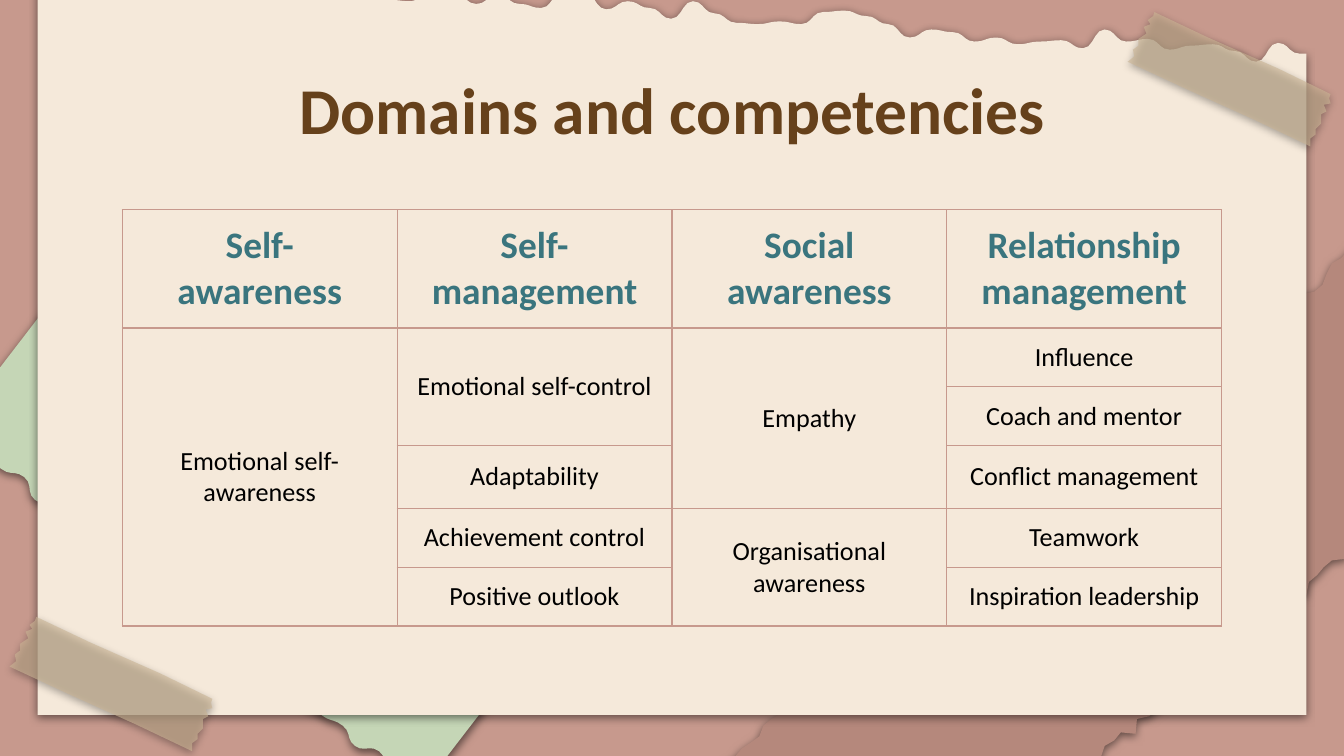
import math

import pptx
import pptx.dml.color
import pptx.enum.text
import pptx.oxml
import pptx.oxml.ns
import pptx.util
from pptx.util import Inches

COLORS = {
    "background": "C7998D",
    "green": "C5D6B6",
    "brown": "B5887C",
    "paper": "F5E9DA",
    "tape": "CAB494",
    "title": "66411B",
    "heading": "3A757E",
    "text": "000000",
}
NAMESPACE = 'xmlns:a="http://schemas.openxmlformats.org/drawingml/2006/main"'
SHADOW = (
    f'<a:outerShdw {NAMESPACE} blurRad="57150" dist="19050" dir="5400000" algn="bl" '
    'rotWithShape="0"><a:srgbClr val="000000"><a:alpha val="50000"/></a:srgbClr></a:outerShdw>'
)

# A 16:9 page
deck = pptx.Presentation()
deck.slide_width = Inches(10)
deck.slide_height = Inches(10) * 9 // 16
page = deck.slides.add_slide(deck.slide_layouts[5])
page.background.fill.solid()
page.background.fill.fore_color.rgb = pptx.dml.color.RGBColor.from_string(COLORS["background"])


def add_scrap(points, color, opacity=100):
    """Draw a closed piece of paper, given in inches, with a soft shadow below it."""
    corners = [(Inches(x), Inches(y)) for x, y in points]
    builder = page.shapes.build_freeform(*corners[0])
    builder.add_line_segments(corners[1:], close=True)
    shape = builder.convert_to_shape()
    shape.fill.solid()
    shape.fill.fore_color.rgb = pptx.dml.color.RGBColor.from_string(COLORS[color])
    shape.line.fill.background()
    shape.shadow.inherit = False
    effects = shape.element.spPr.find(pptx.oxml.ns.qn("a:effectLst"))
    effects.append(pptx.oxml.parse_xml(SHADOW))
    if opacity < 100:
        fill_color = shape.element.spPr.find(".//" + pptx.oxml.ns.qn("a:srgbClr"))
        fill_color.append(pptx.oxml.parse_xml(f'<a:alpha {NAMESPACE} val="{opacity * 1000}"/>'))


def style_text(frame, size, color, bold):
    """Centre the text of a frame and set its font."""
    for para in frame.paragraphs:
        para.alignment = pptx.enum.text.PP_ALIGN.CENTER
        for span in para.runs:
            font_format = {"name": "Calibri", "size": pptx.util.Pt(size), "bold": bold}
            for name, value in font_format.items():
                setattr(span.font, name, value)
            span.font.color.rgb = pptx.dml.color.RGBColor.from_string(COLORS[color])


# Knots of the two torn edges
green_knots = [
    (-0.38, 3.23), (-0.26, 3.29), (-0.13, 3.39), (0.01, 3.49), (0.18, 3.55), (0.26, 3.72),
    (0.42, 3.78), (0.53, 3.92), (0.66, 4.02), (0.84, 4.06), (0.92, 4.23), (1.1, 4.27),
    (1.21, 4.39), (1.32, 4.53), (1.49, 4.58), (1.62, 4.69), (1.74, 4.81), (1.88, 4.9),
    (1.99, 5.03), (2.15, 5.1), (2.25, 5.24), (2.39, 5.32), (2.55, 5.4), (2.64, 5.55),
    (2.82, 5.59), (2.91, 5.75), (3.04, 5.85), (3.11, 5.91),
]
paper_heights = [
    -0.21, -0.34, -0.3, -0.21, -0.18, -0.25, -0.2, -0.17, -0.15, -0.25, -0.07, -0.22,
    -0.05, -0.15, -0.06, -0.05, 0, 0.01, -0.1, -0.05, 0.03, -0.04, 0.03, 0.06, -0.06,
    -0.05, 0.07, 0.01, 0.06, 0.14, 0.01, 0.1, 0.17, 0.18, 0.16, 0.18, 0.09, 0.08, 0.12,
    0.18, 0.28, 0.22, 0.24, 0.31, 0.28, 0.33, 0.31, 0.3, 0.36, 0.22, 0.31, 0.29, 0.37,
    0.34, 0.33, 0.38, 0.46, 0.32, 0.4,
]
paper_step = (9.67 - 0.32) / (len(paper_heights) - 1)
paper_knots = [(0.32 + paper_step * i, y) for i, y in enumerate(paper_heights)]

# Each wave is an S-curve whose ends run along the direction of the edge
edges = []
for knots, angle in ((green_knots, 37.6), (paper_knots, 0)):
    along = (math.cos(math.radians(angle)), math.sin(math.radians(angle)))
    edge = [knots[0]]
    for start, end in zip(knots, knots[1:]):
        reach = sum((end[k] - start[k]) * along[k] for k in (0, 1)) / 2
        for t in (0.2, 0.4, 0.6, 0.8, 1):
            before = (1 - t) ** 3 + 3 * t * (1 - t) ** 2
            pull = 3 * t * (1 - t) * (1 - 2 * t) * reach
            edge.append(tuple(
                before * start[k] + (1 - before) * end[k] + pull * along[k] for k in (0, 1)
            ))
    edges.append(edge)
green_edge, paper_edge = edges

# Paper scraps, from back to front
brown_outline = [
    (8.5, 3.07), (8.2, 3.44), (7.91, 3.7), (7.49, 3.92), (7.2, 4.18), (6.86, 4.51),
    (6.44, 4.86), (6.07, 5.14), (5.98, 5.15), (5.93, 5.21), (5.92, 5.32), (5.81, 5.31),
    (5.74, 5.35), (5.68, 5.4), (5.65, 5.48), (5.58, 5.53), (5.52, 5.57), (5.47, 5.63),
    (5.3, 5.72), (6.42, 7.08), (6.64, 6.94), (7.01, 6.53), (7.46, 6.22), (7.91, 5.91),
    (7.99, 5.75), (8.06, 5.72), (8.12, 5.67), (8.19, 5.64), (8.22, 5.55), (8.29, 5.51),
    (8.34, 5.45), (8.45, 5.46), (8.46, 5.35), (8.55, 5.33), (8.61, 5.28), (8.96, 4.97),
    (9.39, 4.64), (9.6, 4.41), (9.72, 4.43), (9.74, 4.33), (9.8, 4.28), (9.85, 4.22),
    (9.91, 4.17), (10, 4.16), (10.05, 4.09), (10.4, 3.79), (10.76, 3.48), (11.14, 3.2),
    (10.91, 2.98), (10.74, 2.81), (10.53, 2.49), (10.3, 2.18), (10.05, 1.84), (9.98, 1.92),
    (9.91, 1.96), (9.87, 2.04), (9.84, 2.12), (9.78, 2.17), (9.69, 2.19), (9.62, 2.22),
    (9.29, 2.44), (9.23, 2.61), (9, 2.7), (8.75, 3.01),
]
add_scrap([(0.35, 2.28)] + green_edge + [(3.84, 4.96)], "green")
add_scrap(brown_outline, "brown")
add_scrap([(0.28, 5.32), (0.28, -0.22)] + paper_edge + [(9.72, 0.4), (9.72, 5.32)], "paper")

# Two strips of tape
tape_outline = [
    (0.17, 0.09), (0.15, 0.06), (0.19, 0.03), (0.2, 0), (0.6, 0.19), (1.12, 0.42),
    (1.51, 0.61), (1.5, 0.64), (1.51, 0.68), (1.46, 0.69), (1.48, 0.74), (1.44, 0.76),
    (1.44, 0.83), (1.4, 0.87), (1.4, 0.91), (1.36, 0.94), (1.36, 1), (0.94, 0.8),
    (0.43, 0.57), (0, 0.37), (0.05, 0.33), (0.04, 0.28), (0.08, 0.25), (0.08, 0.2),
    (0.14, 0.16), (0.12, 0.11),
]
for left, top in ((8.39, 0.09), (0.07, 4.59)):
    add_scrap([(left + x, top + y) for x, y in tape_outline], "tape", 61)

# Title, brought in front of the paper
title = page.shapes.title
title_place = {"left": 0.79, "top": 0.49, "width": 8.43, "height": 0.63}
for name, value in title_place.items():
    setattr(title, name, Inches(value))
title.element.getparent().append(title.element)
frame_format = {
    "text": "Domains and competencies",
    "word_wrap": True,
    "auto_size": pptx.enum.text.MSO_AUTO_SIZE.NONE,
    "vertical_anchor": pptx.enum.text.MSO_ANCHOR.MIDDLE,
}
margins = {f"margin_{side}": Inches(0.1) for side in ("left", "top", "right", "bottom")}
for name, value in {**frame_format, **margins}.items():
    setattr(title.text_frame, name, value)
style_text(title.text_frame, 35, "title", True)

# Table of domains: each column lists its heading, then (text, rows spanned)
columns = [
    ("Self-\nawareness", [("Emotional self-awareness", 5)]),
    ("Self-\nmanagement", [("Emotional self-control", 2), ("Adaptability", 1),
                           ("Achievement control", 1), ("Positive outlook", 1)]),
    ("Social awareness", [("Empathy", 3), ("Organisational awareness", 2)]),
    ("Relationship management", [("Influence", 1), ("Coach and mentor", 1),
                                 ("Conflict management", 1), ("Teamwork", 1),
                                 ("Inspiration leadership", 1)]),
]
row_heights = [0.61, 0.32, 0.32, 0.47, 0.32, 0.32]
table_frame = page.shapes.add_table(
    len(row_heights), len(columns), Inches(0.91), Inches(1.56), Inches(8.18), Inches(3.07)
)
table = table_frame.table
table.first_row = False
table.horz_banding = False
for row, height in zip(table.rows, row_heights):
    row.height = Inches(height)
table_frame.height = Inches(3.07)

for cell in table.iter_cells():
    properties = cell._tc.get_or_add_tcPr()
    for side in "LRTB":
        properties.append(pptx.oxml.parse_xml(
            f'<a:ln{side} {NAMESPACE} w="9525"><a:solidFill>'
            f'<a:srgbClr val="{COLORS["background"]}"/></a:solidFill></a:ln{side}>'
        ))
    cell.fill.background()
    cell.vertical_anchor = pptx.enum.text.MSO_ANCHOR.MIDDLE
    for name, value in margins.items():
        setattr(cell, name, value)

for column, (heading, competencies) in enumerate(columns):
    row = 0
    for text, span_rows in [(heading, 1)] + competencies:
        cell = table.cell(row, column)
        if span_rows > 1:
            cell.merge(table.cell(row + span_rows - 1, column))
        cell.text = text
        if row == 0:
            style_text(cell.text_frame, 20, "heading", True)
        else:
            style_text(cell.text_frame, 14, "text", False)
        row += span_rows

deck.save("out.pptx")
